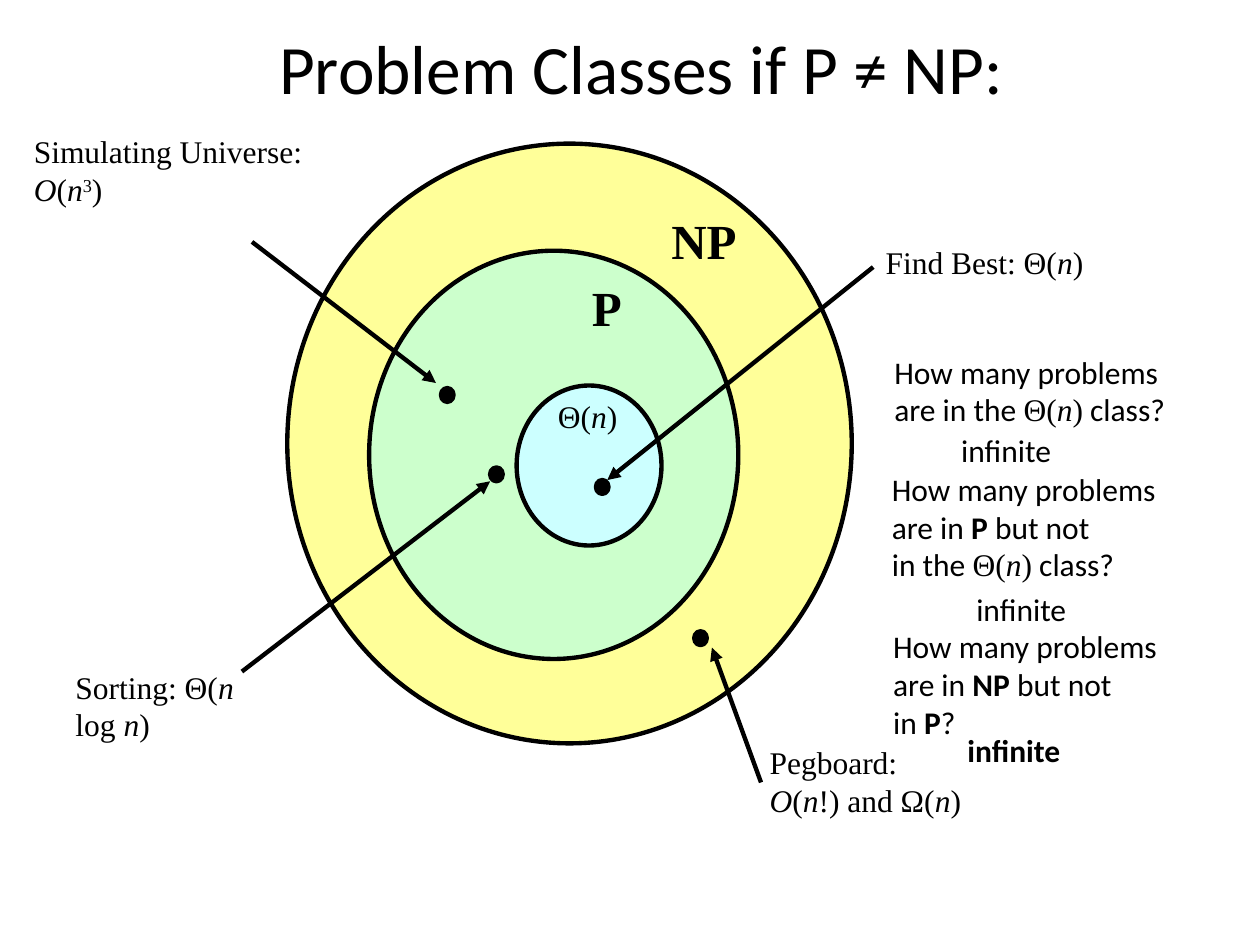
from typing import NamedTuple

from lxml.etree import SubElement
from pptx import Presentation
from pptx.dml.color import RGBColor
from pptx.enum.shapes import MSO_CONNECTOR, MSO_SHAPE
from pptx.enum.text import MSO_ANCHOR, MSO_AUTO_SIZE, PP_ALIGN
from pptx.oxml.ns import qn
from pptx.slide import Slide
from pptx.util import Inches, Pt

BLACK = RGBColor(0x00, 0x00, 0x00)
YELLOW = RGBColor(0xFF, 0xFF, 0x99)
GREEN = RGBColor(0xCC, 0xFF, 0xCC)
CYAN = RGBColor(0xCC, 0xFF, 0xFF)
SANS = "Calibri"
SERIF = "Times New Roman"

SLIDE_WIDTH, SLIDE_HEIGHT = Inches(10), Inches(7.5)
COLUMNS, ROWS = 100, 75
STROKE = Pt(2.5)
DOT_COLUMNS, DOT_ROWS = 1, 1.1


class Span(NamedTuple):
    text: str
    font: str = SANS
    size: float = 18
    bold: bool = False
    italic: bool = False
    raised: bool = False


class Oval(NamedTuple):
    column: float
    row: float
    columns: float
    rows: float
    color: RGBColor


class Arrow(NamedTuple):
    start: tuple[float, float]
    end: tuple[float, float]


class Label(NamedTuple):
    column: float
    row: float
    columns: float
    rows: float
    paragraphs: list[list[Span]]
    wrap: bool = False


def serif(text: str) -> Span:
    return Span(text, SERIF)


def strong(text: str) -> Span:
    return Span(text, bold=True)


def class_name(text: str) -> list[Span]:
    return [Span(text, SERIF, 28, bold=True)]


def variable(text: str) -> Span:
    return Span(text, SERIF, italic=True)


def theta(prefix: str = "") -> list[Span]:
    return [serif(prefix + "Θ("), variable("n"), serif(")")]


HOW_MANY = [Span("How many problems")]

OVALS = [
    Oval(22.8, 11.4, 44.8, 47.6, YELLOW),
    Oval(29.3, 19.9, 29.3, 32.4, GREEN),
    Oval(41, 30.6, 11.5, 12.7, CYAN),
]
DOTS = [
    Oval(column, row, DOT_COLUMNS, DOT_ROWS, BLACK)
    for column, row in [(38.9, 37.1), (35, 30.8), (55.1, 50.1), (47.3, 38.1)]
]
ARROWS = [
    Arrow((19.2, 53.3), (38.9, 38.2)),
    Arrow((20, 19.2), (34.6, 30.4)),
    Arrow((60.4, 62.1), (56.5, 51.4)),
    Arrow((69.3, 21.2), (48.2, 38.1)),
]
LABELS = [
    Label(46, 21.5, 4.4, 5.7, [class_name("P")]),
    Label(52.3, 16.2, 12.3, 5.7, [class_name("NP")], True),
    Label(43.3, 31, 6.8, 4, [theta()]),
    Label(5, 52.5, 17.5, 9, [[
        serif("Sorting: Θ("), variable("n"), serif(" log "), variable("n"), serif(")"),
    ]], True),
    Label(1.7, 10, 28.7, 9, [[
        serif("Simulating Universe: "), variable("O"), serif("("), variable("n"),
        Span("3", SERIF, raised=True), serif(")"),
    ]], True),
    Label(60.1, 58.5, 24.2, 9, [
        [serif("Pegboard:")],
        [variable("O"), serif("("), variable("n"), serif("!) and Ω("), variable("n"), serif(")")],
    ], True),
    Label(69.3, 18.8, 23, 5, [theta("Find Best: ")]),
    Label(70, 27.5, 25.4, 7, [
        HOW_MANY,
        [Span("are in the "), *theta(), Span(" class?")],
    ]),
    Label(69.8, 36.8, 24.7, 10, [
        HOW_MANY,
        [Span("are in "), strong("P"), Span(" but not")],
        [Span("in the "), *theta(), Span(" class?")],
    ]),
    Label(69.9, 49.3, 24.7, 10, [
        HOW_MANY,
        [Span("are in "), strong("NP"), Span(" but not")],
        [Span("in "), strong("P"), Span("?")],
    ]),
    Label(75.3, 33.7, 9.5, 4, [[Span("infinite")]]),
    Label(76.5, 46.3, 9.5, 4, [[Span("infinite")]]),
    Label(75.8, 57.5, 10.9, 4, [[strong("infinite")]]),
]


def across(columns: float) -> int:
    return round(SLIDE_WIDTH * columns / COLUMNS)


def down(rows: float) -> int:
    return round(SLIDE_HEIGHT * rows / ROWS)


def add_span(paragraph, span: Span) -> None:
    run = paragraph.add_run()
    run.text = span.text
    run.font.name = span.font
    run.font.size = Pt(span.size)
    run.font.bold = span.bold
    run.font.italic = span.italic
    run.font.color.rgb = BLACK
    if span.raised:
        run.font._element.set("baseline", "30000")


def draw_title(page: Slide, span: Span) -> None:
    title = page.shapes.title
    title.left, title.top = across(4.3), down(1.4)
    title.width, title.height = across(93.2), down(7.8)
    title.text_frame.vertical_anchor = MSO_ANCHOR.MIDDLE
    paragraph = title.text_frame.paragraphs[0]
    paragraph.alignment = PP_ALIGN.CENTER
    add_span(paragraph, span)


def draw_oval(page: Slide, oval: Oval) -> None:
    shape = page.shapes.add_shape(
        MSO_SHAPE.OVAL, across(oval.column), down(oval.row), across(oval.columns), down(oval.rows)
    )
    shape.shadow.inherit = False
    shape.fill.solid()
    shape.fill.fore_color.rgb = oval.color
    shape.line.color.rgb = BLACK
    shape.line.width = STROKE


def draw_arrow(page: Slide, arrow: Arrow) -> None:
    connector = page.shapes.add_connector(
        MSO_CONNECTOR.STRAIGHT,
        across(arrow.start[0]), down(arrow.start[1]),
        across(arrow.end[0]), down(arrow.end[1]),
    )
    connector.line.color.rgb = BLACK
    connector.line.width = STROKE
    SubElement(connector.line._get_or_add_ln(), qn("a:tailEnd"), type="triangle")
    SubElement(connector._element.spPr, qn("a:effectLst"))


def draw_label(page: Slide, label: Label) -> None:
    box = page.shapes.add_textbox(
        across(label.column), down(label.row), across(label.columns), down(label.rows)
    )
    frame = box.text_frame
    frame.word_wrap = label.wrap
    frame.auto_size = MSO_AUTO_SIZE.SHAPE_TO_FIT_TEXT
    for index, spans in enumerate(label.paragraphs):
        paragraph = frame.add_paragraph() if index else frame.paragraphs[0]
        for span in spans:
            add_span(paragraph, span)


def main() -> None:
    deck = Presentation()
    deck.slide_width, deck.slide_height = SLIDE_WIDTH, SLIDE_HEIGHT
    page = deck.slides.add_slide(deck.slide_layouts[5])
    draw_title(page, Span("Problem Classes if P ≠ NP:", size=39.6))
    for oval in OVALS + DOTS:
        draw_oval(page, oval)
    for arrow in ARROWS:
        draw_arrow(page, arrow)
    for label in LABELS:
        draw_label(page, label)
    deck.save("out.pptx")


if __name__ == "__main__":
    main()
